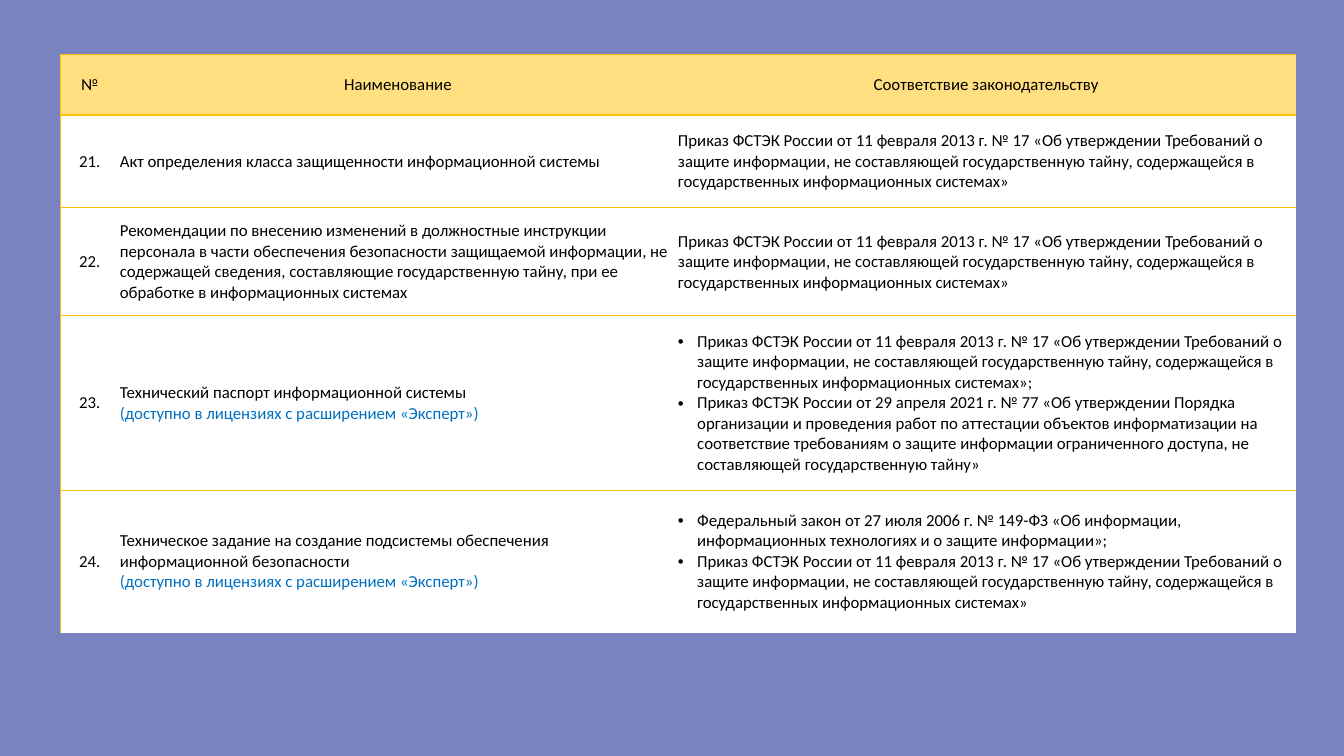
import pptx
import pptx.util
import pptx.dml.color
import pptx.enum.text
import pptx.oxml
import pptx.oxml.ns
import lxml.etree

Inches = pptx.util.Inches
RGB = pptx.dml.color.RGBColor
ALIGN = pptx.enum.text.PP_ALIGN

BACK = RGB(0x78, 0x83, 0xC0)
HEAD = RGB(0xFF, 0xDF, 0x7F)
GOLD = RGB(0xFF, 0xC0, 0x00)
WHITE = RGB(0xFF, 0xFF, 0xFF)
BLACK = RGB(0x00, 0x00, 0x00)
BLUE = RGB(0x00, 0x70, 0xC0)

WIDE, HIGH = 13.33, 7.5
BOX = (0.6, 0.54, 12.25, 5.74)
COLS = (0.58, 5.54, 6.14)
ROWS = (0.6, 0.92, 1.07, 1.73, 1.41)

ORDER = ("Приказ ФСТЭК России от 11 февраля 2013 г. № 17 «Об утверждении Требований о "
         "защите информации, не составляющей государственную тайну, содержащейся в "
         "государственных информационных системах»")
RULES = ("Приказ ФСТЭК России от 29 апреля 2021 г. № 77 «Об утверждении Порядка "
         "организации и проведения работ по аттестации объектов информатизации на "
         "соответствие требованиям о защите информации ограниченного доступа, не "
         "составляющей государственную тайну»")
LAW = ("Федеральный закон от 27 июля 2006 г. № 149-ФЗ «Об информации, "
       "информационных технологиях и о защите информации»;")
NOTE = "(доступно в лицензиях с расширением «Эксперт»)"
ADVICE = ("Рекомендации по внесению изменений в должностные инструкции персонала "
          "в части обеспечения безопасности защищаемой информации, не содержащей "
          "сведения, составляющие государственную тайну, при ее обработке в "
          "информационных системах")

DATA = (
    (["№"], ["Наименование"], ["Соответствие законодательству"]),
    (["21."], ["Акт определения класса защищенности информационной системы"], [ORDER]),
    (["22."], [ADVICE], [ORDER]),
    (["23."], ["Технический паспорт информационной системы", NOTE], [ORDER + ";", RULES]),
    (["24."], ["Техническое задание на создание подсистемы обеспечения "
               "информационной безопасности", NOTE], [LAW, ORDER]),
)


def edge(cell, side, shown):
    props = cell._tc.get_or_add_tcPr()
    line = lxml.etree.SubElement(props, pptx.oxml.ns.qn("a:ln" + side), w="12700")
    if shown:
        fill = lxml.etree.SubElement(line, pptx.oxml.ns.qn("a:solidFill"))
        lxml.etree.SubElement(fill, pptx.oxml.ns.qn("a:srgbClr"), val=str(GOLD))
    else:
        lxml.etree.SubElement(line, pptx.oxml.ns.qn("a:noFill"))


def bullet(para):
    props = para._p.get_or_add_pPr()
    props.set("marL", str(Inches(0.19)))
    props.set("indent", str(-Inches(0.19)))
    lxml.etree.SubElement(props, pptx.oxml.ns.qn("a:buFont"), typeface="Arial")
    lxml.etree.SubElement(props, pptx.oxml.ns.qn("a:buChar"), char="•")


def write(cell, lines, center, listed):
    frame = cell.text_frame
    frame.text = "\n".join(lines)
    for para, line in zip(frame.paragraphs, lines):
        para.alignment = ALIGN.CENTER if center else ALIGN.LEFT
        if listed:
            bullet(para)
        para.font.size = pptx.util.Pt(12)
        para.font.name = "Calibri"
        para.font.color.rgb = BLUE if line == NOTE else BLACK


def style(cell, row, col):
    pad = Inches(0.01) if row and col else 0
    cell.margin_left = cell.margin_right = pad
    cell.margin_top = cell.margin_bottom = pad
    cell.vertical_anchor = pptx.enum.text.MSO_ANCHOR.MIDDLE
    shown = {"L": col == 0, "R": False, "T": True, "B": row < len(ROWS) - 1}
    for side in shown:
        edge(cell, side, shown[side])
    cell.fill.solid()
    cell.fill.fore_color.rgb = WHITE if row else HEAD


def build_table(slide, box):
    left, top, width, height = box
    table = slide.shapes.add_table(len(ROWS), len(COLS), Inches(left), Inches(top),
                                   Inches(width), Inches(height)).table
    table.first_row = table.horz_banding = False
    for col, share in enumerate(COLS):
        table.columns[col].width = int(Inches(width) * share / sum(COLS))
    for row, share in enumerate(ROWS):
        table.rows[row].height = int(Inches(height) * share / sum(ROWS))
        for col, lines in enumerate(DATA[row]):
            cell = table.cell(row, col)
            style(cell, row, col)
            write(cell, lines, row == 0 or col == 0, col == 2 and len(lines) > 1)


def main():
    deck = pptx.Presentation()
    deck.slide_width, deck.slide_height = Inches(WIDE), Inches(HIGH)
    slide = deck.slides.add_slide(deck.slide_layouts[6])
    slide.background.fill.solid()
    slide.background.fill.fore_color.rgb = BACK
    build_table(slide, BOX)
    deck.save("out.pptx")


if __name__ == "__main__":
    main()
